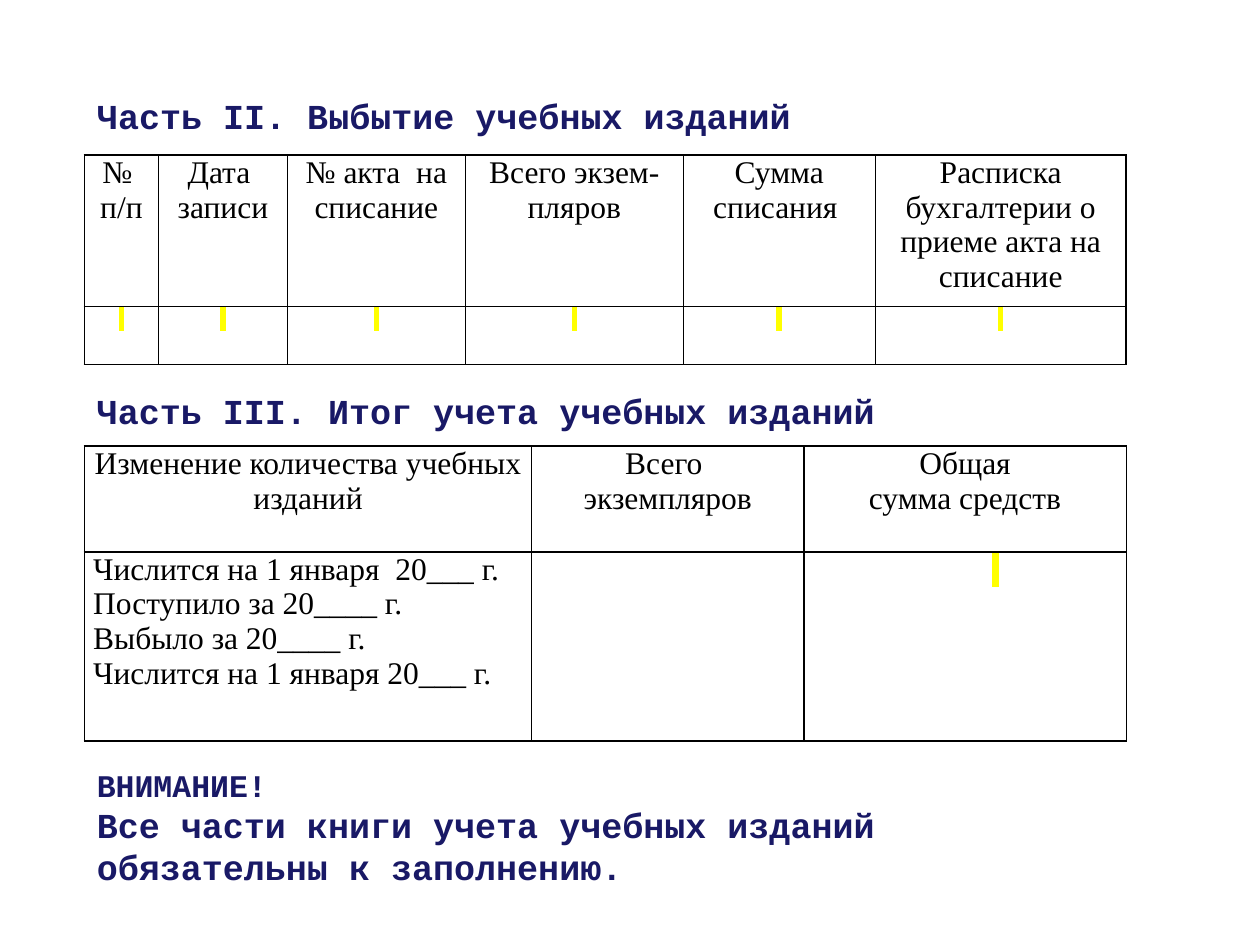
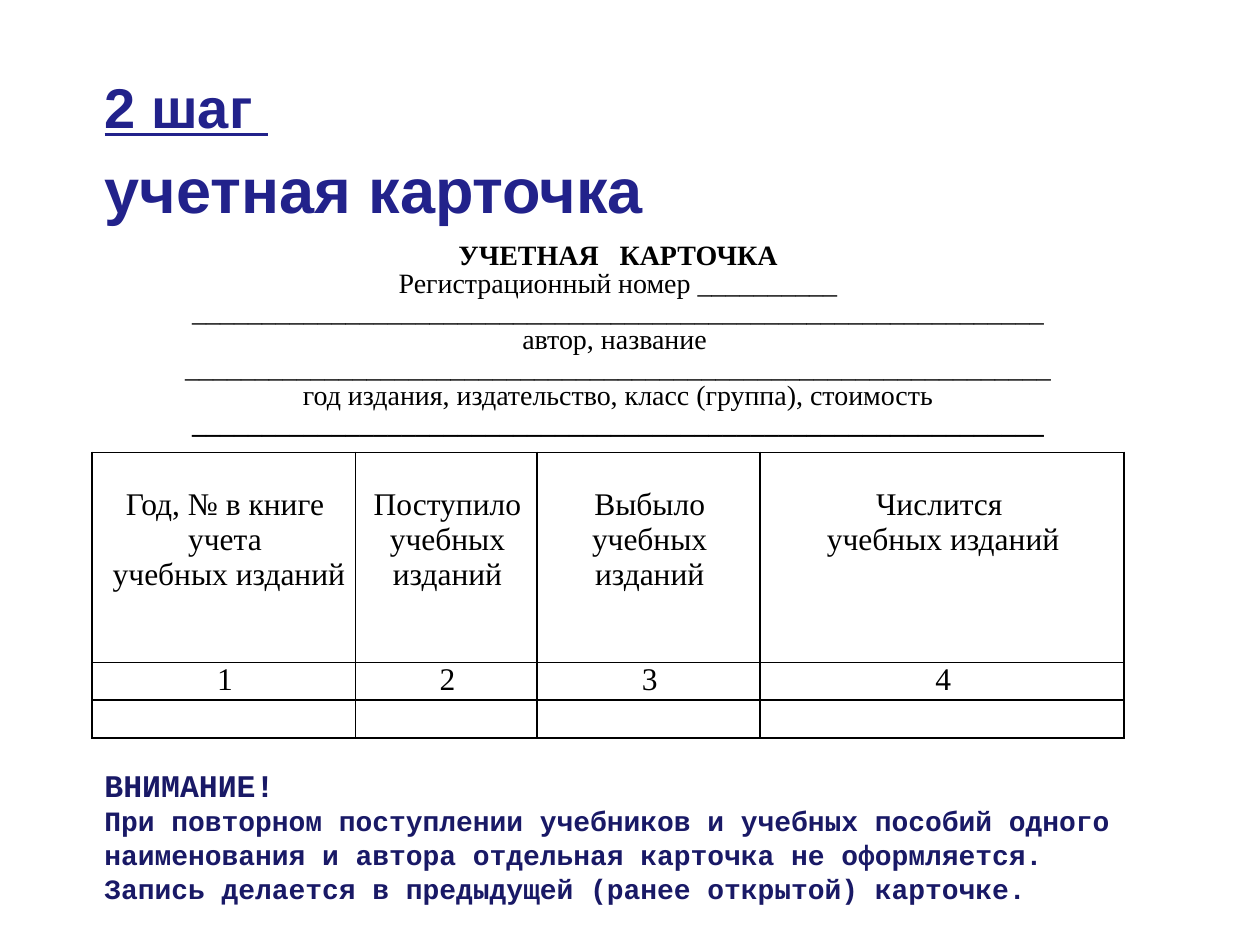
import pptx
import pptx.dml.color
import pptx.enum.text
import pptx.oxml
import pptx.oxml.ns
import pptx.text.text
import pptx.util

Pt = pptx.util.Pt
RGB = pptx.dml.color.RGBColor.from_string
ALIGN = pptx.enum.text.PP_ALIGN
ANCHOR = pptx.enum.text.MSO_ANCHOR
NONE = pptx.enum.text.MSO_AUTO_SIZE.NONE
NS = pptx.oxml.ns.nsdecls("a")
NBSP = chr(160)

THEME = {
    "heading": dict(name="Courier New", size=Pt(20), bold=True, color="191966"),
    "warning": dict(name="Courier New", size=Pt(18), bold=True, color="191966"),
    "detail": dict(name="Courier New", size=Pt(16), bold=True, color="191966"),
    "step": dict(name="Arial", size=Pt(32), bold=True, underline=True, color="22228B"),
    "topic": dict(name="Arial", size=Pt(36), bold=True, underline=False, color="22228B"),
    "cell": dict(name="Times New Roman", size=Pt(18), bold=False, color="000000"),
    "blank": dict(name="Times New Roman", size=Pt(13), bold=False, color="000000"),
    "card": dict(name="Times New Roman", size=Pt(16), bold=False, color="000000"),
    "card bold": dict(name="Times New Roman", size=Pt(16), bold=True, color="000000"),
    "border": "000000",
    "marker": "FFFF00",
}


def write(tf, lines, **para):
    """Write (text, style name) pairs as paragraphs; a lone space that cannot break is marked."""
    for i, (text, style) in enumerate(lines):
        p = tf.paragraphs[0] if i == 0 else tf.add_paragraph()
        for key, value in para.items():
            setattr(p, key, value)
        if text:
            r = p.add_run()
            r.text = text
            font = r.font
        else:
            font = pptx.text.text.Font(p._p.get_or_add_endParaRPr())
        for key, value in THEME[style].items():
            if key == "color":
                font.color.rgb = RGB(value)
            else:
                setattr(font, key, value)
        if text == NBSP:
            mark = pptx.oxml.parse_xml(
                f'<a:highlight {NS}><a:srgbClr val="{THEME["marker"]}"/></a:highlight>')
            r._r.rPr.find(pptx.oxml.ns.qn("a:solidFill")).addnext(mark)


def add_grid(s, left, top, widths, heights, rows, style="cell"):
    """Add a bordered table; the style applies to rows under the header."""
    frame = s.shapes.add_table(len(heights), len(widths), Pt(left), Pt(top),
                               Pt(sum(widths)), Pt(sum(heights)))
    table = frame.table
    table.first_row = table.horz_banding = False
    for column, width in zip(table.columns, widths):
        column.width = Pt(width)
    for row, height in zip(table.rows, heights):
        row.height = Pt(height)
    for i, row in enumerate(rows):
        for j, text in enumerate(row):
            cell = table.cell(i, j)
            cell.margin_left = cell.margin_right = Pt(5)
            cell.margin_top = cell.margin_bottom = 0
            cell.fill.background()
            for n, side in enumerate(("lnL", "lnR", "lnT", "lnB")):
                line = pptx.oxml.parse_xml(
                    f'<a:{side} {NS} w="{Pt(1)}"><a:solidFill>'
                    f'<a:srgbClr val="{THEME["border"]}"/></a:solidFill></a:{side}>')
                cell._tc.tcPr.insert(n, line)
            write(cell.text_frame,
                  [(t, style if i else "cell") for t in text.split("\n")],
                  alignment=ALIGN.CENTER)
    return table


prs = pptx.Presentation()
prs.slide_width, prs.slide_height = Pt(720), Pt(540)

SLIDES = [
    dict(title=[("Часть II. Выбытие учебных изданий", "heading")],
         title_at=(48.25, 43.2, 612, 45.35), anchor=ANCHOR.MIDDLE, spacing=[None],
         texts=[
             ((48.25, 218.9, 491.8, 31.7),
              [("Часть III. Итог учета учебных изданий", "heading")]),
             ((48.25, 434.2, 595.4, 80),
              [("ВНИМАНИЕ!", "warning"),
               ("Все части книги учета учебных изданий обязательны к заполнению.",
                "heading")]),
         ]),
    dict(title=[("2 шаг ", "step"), ("учетная карточка", "topic")],
         title_at=(52.6, 52.6, 612, 80.4), anchor=ANCHOR.BOTTOM,
         spacing=[Pt(40), Pt(49.4)],
         texts=[
             ((52.6, 434.2, 590.4, 87.1),
              [("ВНИМАНИЕ!", "warning"),
               ("При повторном поступлении учебников и учебных пособий одного "
                "наименования и автора отдельная карточка не оформляется. "
                "Запись делается в предыдущей (ранее открытой) карточке.", "detail")]),
         ]),
]

for content in SLIDES:
    s = prs.slides.add_slide(prs.slide_layouts[5])
    title = s.shapes.title
    title.left, title.top, title.width, title.height = map(Pt, content["title_at"])
    tf = title.text_frame
    tf.word_wrap, tf.auto_size = True, NONE
    tf.vertical_anchor = content["anchor"]
    write(tf, content["title"], alignment=ALIGN.LEFT)
    for p, spacing in zip(tf.paragraphs, content["spacing"]):
        p.line_spacing = spacing
    for box, lines in content["texts"]:
        tf = s.shapes.add_textbox(*map(Pt, box)).text_frame
        tf.word_wrap = True
        write(tf, lines)

disposal, card = prs.slides

# Disposal and totals tables
add_grid(disposal, 48.25, 88.6, [42.3, 73.7, 101.7, 124.6, 109.7, 143.4], [79.6, 33.4], [
    ["№ \nп/п", "Дата \nзаписи", "№ акта  на списание", "Всего экзем-пляров",
     "Сумма списания ", "Расписка бухгалтерии о приеме акта на списание"],
    [NBSP] * 6,
], style="blank")
totals = add_grid(disposal, 48.25, 254.9, [255.6, 155.5, 184.3], [60.5, 108], [
    ["Изменение количества учебных изданий", "Всего \nэкземпляров",
     "Общая\nсумма средств"],
    ["Числится на 1 января  20___ г.\nПоступило за 20____ г.\n"
     "Выбыло за 20____ г.\nЧислится на 1 января 20___ г.", "", NBSP],
])
for p in totals.cell(1, 0).text_frame.paragraphs:
    p.alignment = ALIGN.LEFT
totals.cell(1, 2).margin_left = Pt(40)

# Registration card
records = add_grid(card, 52.6, 258.5, [150.5, 103.7, 127.4, 208.1], [120, 20, 20], [
    ["Год, № в книге\nучета\n учебных изданий", "Поступило\nучебных изданий",
     "Выбыло учебных изданий", "Числится \nучебных изданий"],
    ["1", "2", "3", "4"],
    [""] * 4,
])
for cell in records.rows[0].cells:
    cell.margin_top = Pt(20)
for cell in records.iter_cells():
    cell.margin_left = Pt(6.5)

tf = card.shapes.add_textbox(Pt(52.6), Pt(133.9), Pt(601.2), Pt(141.8)).text_frame
tf.word_wrap = True
tf.margin_top = Pt(5)
write(tf, [
    ("УЧЕТНАЯ   КАРТОЧКА", "card bold"),
    ("Регистрационный номер " + "_" * 10, "card"),
    ("_" * 61, "card"),
    ("автор, название ", "card"),
    ("_" * 62, "card"),
    ("год издания, издательство, класс (группа), стоимость", "card"),
    ("_" * 61, "card bold"),
], alignment=ALIGN.CENTER, line_spacing=Pt(16))

prs.save("out.pptx")
